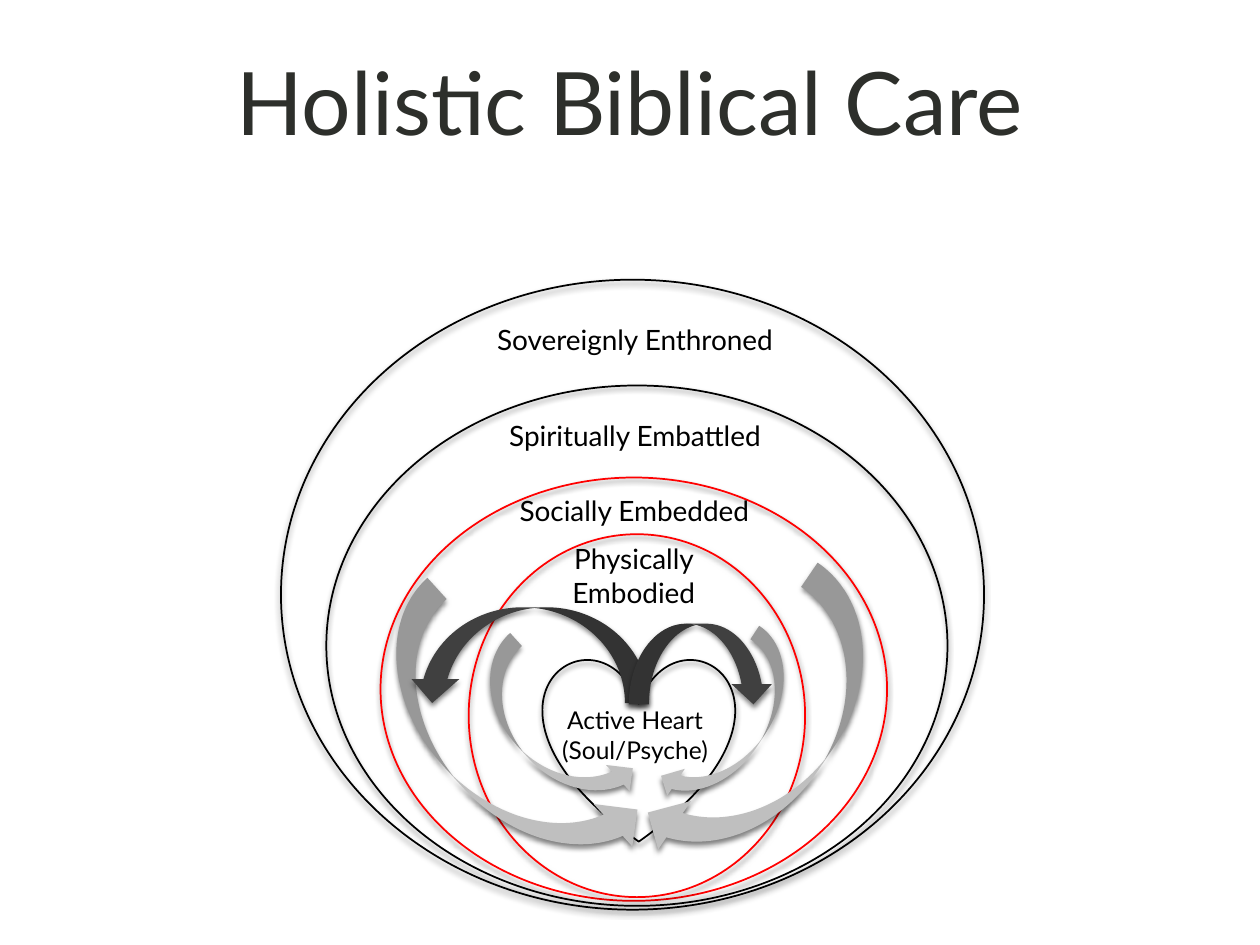
from dataclasses import dataclass

from lxml.etree import SubElement
from pptx import Presentation
from pptx.dml.color import RGBColor
from pptx.enum.shapes import MSO_SHAPE as Preset
from pptx.enum.text import MSO_ANCHOR as Anchor, MSO_AUTO_SIZE as AutoSize, PP_ALIGN as Align
from pptx.oxml.ns import qn
from pptx.util import Inches, Pt


@dataclass(frozen=True)
class Theme:
    font: str = "Lato"
    title_ink: str = "2D2F2B"
    ink: str = "000000"
    accent: str = "FF0000"
    outward: str = "404040"
    inward: str = "BFBFBF"
    title_size: int = 50
    layer_size: int = 16
    heart_size: int = 14
    outline: int = 1
    shadow_opacity: int = 50
    shadow_blur: int = 3
    shadow_distance: int = 2
    shadow_angle: int = 90


@dataclass(frozen=True)
class Box:
    left: float
    top: float
    width: float
    height: float

    def lengths(self):
        return [Inches(v) for v in (self.left, self.top, self.width, self.height)]


@dataclass(frozen=True)
class Outline:
    box: Box
    color: str
    preset: Preset = Preset.OVAL


@dataclass(frozen=True)
class Label:
    box: Box
    text: str
    size: int
    color: str = Theme.ink
    anchor: Anchor = Anchor.TOP
    grows: bool = True


@dataclass(frozen=True)
class Arrow:
    box: Box
    color: str
    rotation: float = 0
    flips: str = ""


THEME = Theme()


def add_shadow(shape) -> None:
    shape.shadow.inherit = False
    effects = shape._element.spPr.find(qn("a:effectLst"))
    outer = SubElement(
        effects, qn("a:outerShdw"),
        blurRad=str(Pt(THEME.shadow_blur)), dist=str(Pt(THEME.shadow_distance)),
        dir=str(THEME.shadow_angle * 60000), rotWithShape="0",
    )
    color = SubElement(outer, qn("a:srgbClr"), val=THEME.ink)
    SubElement(color, qn("a:alpha"), val=str(THEME.shadow_opacity * 1000))


def draw_outline(slide, outline: Outline) -> None:
    shape = slide.shapes.add_shape(outline.preset, *outline.box.lengths())
    shape.fill.background()
    shape.line.color.rgb = RGBColor.from_string(outline.color)
    shape.line.width = Pt(THEME.outline)
    add_shadow(shape)


def draw_arrow(slide, arrow: Arrow) -> None:
    shape = slide.shapes.add_shape(Preset.CURVED_DOWN_ARROW, *arrow.box.lengths())
    shape.fill.solid()
    shape.fill.fore_color.rgb = RGBColor.from_string(arrow.color)
    shape.line.fill.background()
    shape.rotation = arrow.rotation
    for axis in arrow.flips:
        shape._element.spPr.xfrm.set(f"flip{axis}", "1")
    add_shadow(shape)


def draw_label(slide, label: Label) -> None:
    frame = slide.shapes.add_textbox(*label.box.lengths()).text_frame
    frame.text = label.text
    frame.word_wrap = True
    frame.auto_size = AutoSize.SHAPE_TO_FIT_TEXT if label.grows else AutoSize.NONE
    frame.vertical_anchor = label.anchor
    for paragraph in frame.paragraphs:
        paragraph.alignment = Align.CENTER
        for run in paragraph.runs:
            run.font.name = THEME.font
            run.font.size = Pt(label.size)
            run.font.color.rgb = RGBColor.from_string(label.color)


DRAWERS = {Outline: draw_outline, Arrow: draw_arrow, Label: draw_label}

PARTS = [
    Label(Box(0.75, 0.05, 8.5, 1.5), "Holistic Biblical Care", THEME.title_size,
          THEME.title_ink, Anchor.MIDDLE, grows=False),
    Outline(Box(3.02, 3.79, 4.02, 3.36), THEME.accent),
    Outline(Box(3.72, 4.24, 2.67, 2.88), THEME.accent),
    Outline(Box(4.31, 5.22, 1.52, 1.46), THEME.ink, Preset.HEART),
    Label(Box(3.46, 3.87, 3.15, 0.37), "Socially Embedded", THEME.layer_size),
    Label(Box(4.22, 5.55, 1.64, 0.57), "Active Heart\n(Soul/Psyche)", THEME.heart_size),
    Outline(Box(2.23, 2.22, 5.58, 5), THEME.ink),
    Label(Box(3.43, 2.51, 3.22, 0.37), "Sovereignly Enthroned", THEME.layer_size),
    Outline(Box(2.59, 3.06, 4.93, 4.13), THEME.ink),
    Label(Box(3.43, 3.27, 3.22, 0.37), "Spiritually Embattled", THEME.layer_size),
    Arrow(Box(3.58, 5.52, 1.59, 0.56), THEME.inward, 227.8, "H"),
    Arrow(Box(2.61, 5.44, 2.71, 0.91), THEME.inward, 227.8, "H"),
    Arrow(Box(3.24, 4.82, 1.91, 0.76), THEME.outward, flips="H"),
    Arrow(Box(5.04, 5.5, 1.55, 0.51), THEME.inward, 303.2, "HV"),
    Arrow(Box(4.99, 4.95, 1.15, 0.64), THEME.outward),
    Label(Box(4.21, 4.25, 1.64, 0.64), "Physically Embodied", THEME.layer_size),
    Arrow(Box(4.82, 5.35, 2.63, 0.93), THEME.inward, 304.2, "HV"),
]


def main() -> None:
    deck = Presentation()
    deck.slide_width, deck.slide_height = Inches(10), Inches(7.5)
    slide = deck.slides.add_slide(deck.slide_layouts[6])
    for part in PARTS:
        DRAWERS[type(part)](slide, part)
    deck.save("out.pptx")


if __name__ == "__main__":
    main()
